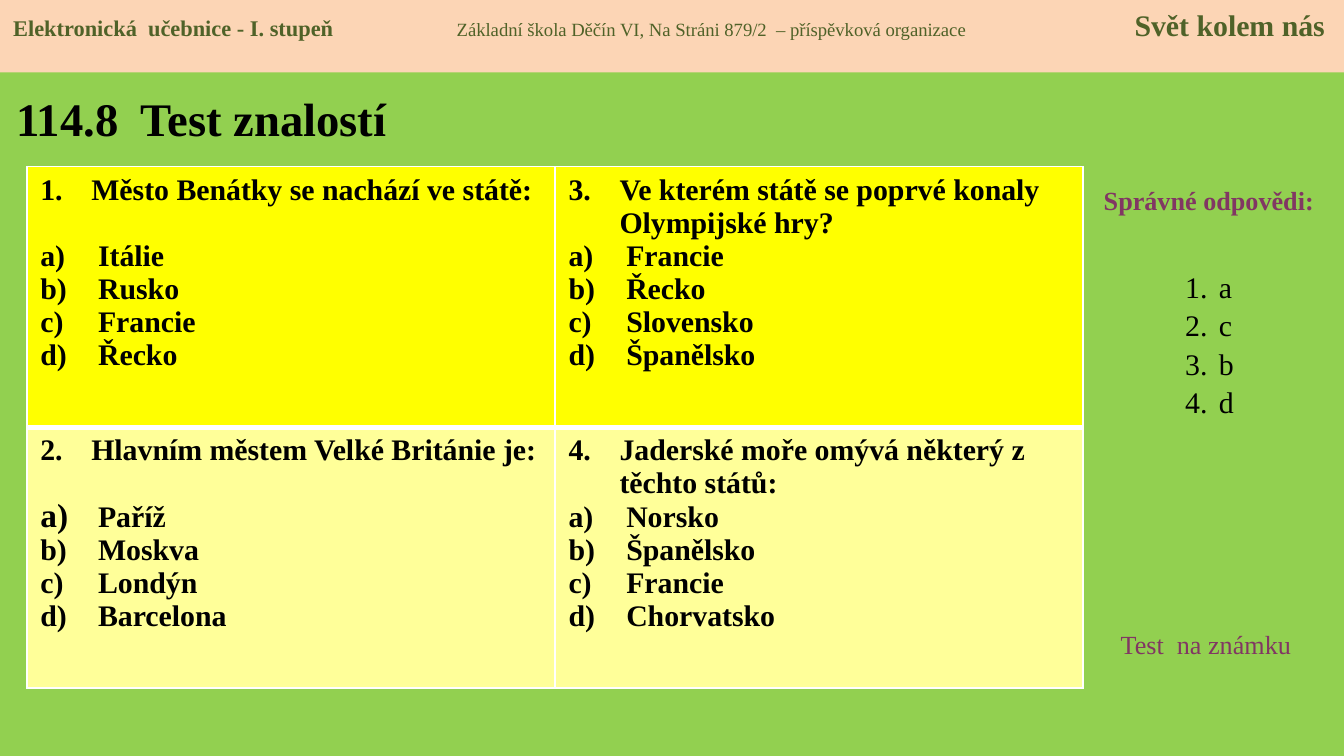
"""Builds a quiz slide with four questions, a header band and an answer key."""
from typing import NamedTuple

from lxml.etree import SubElement as Sub
from pptx import Presentation
from pptx.dml.color import RGBColor as RGB
from pptx.enum.shapes import MSO_SHAPE as Shape
from pptx.enum.text import MSO_ANCHOR as Anchor, MSO_AUTO_SIZE as Auto, PP_ALIGN as Align
from pptx.oxml.ns import qn
from pptx.util import Inches, Pt

FONT = "Times New Roman"
GREEN = RGB(0x92, 0xD0, 0x50)
PEACH = RGB(0xFC, 0xD5, 0xB5)
OLIVE = RGB(0x4F, 0x62, 0x28)
PLUM = RGB(0x81, 0x37, 0x63)
YELLOW = RGB(0xFF, 0xFF, 0x00)
PALE = RGB(0xFF, 0xFF, 0x99)
BLACK = RGB(0, 0, 0)
WHITE = RGB(0xFF, 0xFF, 0xFF)

UNIT = Inches(0.1)
COLS, ROWS = 100, 56.25


class Box(NamedTuple):
    """Left, top, width and height in grid units."""
    left: float
    top: float
    width: float
    height: float

    def emu(self) -> list[int]:
        return [round(v * UNIT) for v in self]


class Style(NamedTuple):
    size: float
    color: RGB = BLACK
    bold: bool = False


class Question(NamedTuple):
    number: int
    text: str
    options: tuple[str, ...]
    gap: float = 0
    first_mark: int = 100


class Label(NamedTuple):
    text: str
    box: Box
    style: Style
    align: Align = Align.LEFT


QUIZ = Style(16, bold=True)
QUESTIONS = (
    (Question(1, "Město Benátky se nachází ve státě:",
              ("Itálie", "Rusko", "Francie", "Řecko"), gap=17.8),
     Question(3, "Ve kterém státě se poprvé konaly Olympijské hry?",
              ("Francie", "Řecko", "Slovensko", "Španělsko"))),
    (Question(2, "Hlavním městem Velké Británie je:",
              ("Paříž", "Moskva", "Londýn", "Barcelona"), gap=17.8, first_mark=112),
     Question(4, "Jaderské moře omývá některý z těchto států:",
              ("Norsko", "Španělsko", "Francie", "Chorvatsko"))),
)
HEADER = (
    ("Elektronická  učebnice - I. stupeň", Style(12, OLIVE, True)),
    ("\tZákladní škola Děčín VI, Na Stráni 879/2  – příspěvková organizace", Style(10, OLIVE)),
    ("\tSvět kolem nás", Style(16, OLIVE, True)),
)
HEADER_TABS = ((33, "l"), (97.6, "r"))
LABELS = (
    Label("Správné odpovědi:", Box(80.5, 13.2, 18.9, 3.4), Style(14, PLUM, True), Align.CENTER),
    Label("Test  na známku", Box(82.4, 46.3, 15.7, 3.4), Style(14, PLUM)),
)
ANSWERS = ("a", "c", "b", "d")


def style_run(r, style: Style) -> None:
    r.font.name = FONT
    r.font.size = Pt(style.size)
    r.font.bold = style.bold
    r.font.color.rgb = style.color


def write(p, text: str, style: Style) -> None:
    p.text = text
    for r in p.runs:
        style_run(r, style)


def add_line(tf, index: int):
    return tf.add_paragraph() if index else tf.paragraphs[0]


def number(p, kind: str, indent: float, start: int = 1, percent: int = 100) -> None:
    """Give a paragraph an automatic number with a hanging indent in grid units."""
    ppr = p._p.get_or_add_pPr()
    ppr.set("marL", str(round(indent * UNIT)))
    ppr.set("indent", str(round(-indent * UNIT)))
    if percent != 100:
        Sub(ppr, qn("a:buSzPct"), val=str(percent * 1000))
    Sub(ppr, qn("a:buFont"), typeface=FONT)
    bullet = Sub(ppr, qn("a:buAutoNum"), type=kind)
    if start > 1:
        bullet.set("startAt", str(start))


def add_text_box(s, box: Box):
    tf = s.shapes.add_textbox(*box.emu()).text_frame
    tf.word_wrap = True
    return tf


def add_label(s, label: Label) -> None:
    p = add_text_box(s, label.box).paragraphs[0]
    write(p, label.text, label.style)
    p.alignment = label.align


def border(cell, widths: dict[str, float]) -> None:
    tcpr = cell._tc.get_or_add_tcPr()
    for side, width in widths.items():
        ln = Sub(tcpr, qn(f"a:ln{side}"), w=str(Pt(width)))
        Sub(Sub(ln, qn("a:solidFill")), qn("a:srgbClr"), val=str(WHITE))


def fill_cell(cell, question: Question) -> None:
    tf = cell.text_frame
    write(tf.paragraphs[0], question.text, QUIZ)
    number(tf.paragraphs[0], "arabicPeriod", 3.8, question.number)
    for i, option in enumerate(question.options):
        p = tf.add_paragraph()
        write(p, option, QUIZ)
        number(p, "alphaLcParenR", 4.3, percent=100 if i else question.first_mark)
        if i == 0 and question.gap:
            p.space_before = Pt(question.gap)


def add_quiz(s, box: Box) -> None:
    table = s.shapes.add_table(2, 2, *box.emu()).table
    for i, (row, color) in enumerate(zip(QUESTIONS, (YELLOW, PALE))):
        for j, question in enumerate(row):
            cell = table.cell(i, j)
            border(cell, {"L": 1, "R": 1, "T": 3 if i else 1, "B": 1 if i else 3})
            cell.fill.solid()
            cell.fill.fore_color.rgb = color
            fill_cell(cell, question)


def add_answers(s, box: Box) -> None:
    tf = add_text_box(s, box)
    tf.margin_top = round(3.3 * UNIT)
    for i, answer in enumerate(ANSWERS):
        p = add_line(tf, i)
        write(p, answer, Style(16))
        number(p, "arabicPeriod", 2.5)
        p.line_spacing = 1.07


def add_header(s, box: Box) -> None:
    sp = s.shapes.add_shape(Shape.RECTANGLE, *box.emu())
    sp.shadow.inherit = False
    sp.fill.solid()
    sp.fill.fore_color.rgb = PEACH
    sp.line.fill.background()
    tf = sp.text_frame
    tf.word_wrap = True
    tf.vertical_anchor = Anchor.TOP
    p = tf.paragraphs[0]
    p.alignment = Align.LEFT
    tabs = Sub(p._p.get_or_add_pPr(), qn("a:tabLst"))
    for pos, align in HEADER_TABS:
        Sub(tabs, qn("a:tab"), pos=str(round(pos * UNIT)), algn=align)
    for text, style in HEADER:
        r = p.add_run()
        r.text = text
        style_run(r, style)


def add_title(s, text: str, box: Box) -> None:
    sp = s.shapes.title
    sp.left, sp.top, sp.width, sp.height = box.emu()
    tf = sp.text_frame
    tf.auto_size = Auto.NONE
    tf.vertical_anchor = Anchor.MIDDLE
    write(tf.paragraphs[0], text, Style(25, bold=True))
    tf.paragraphs[0].alignment = Align.LEFT


def main() -> None:
    prs = Presentation()
    prs.slide_width, prs.slide_height = round(COLS * UNIT), round(ROWS * UNIT)
    s = prs.slides.add_slide(prs.slide_layouts[5])
    s.background.fill.solid()
    s.background.fill.fore_color.rgb = GREEN
    add_title(s, "114.8  Test znalostí", Box(0.2, 5.5, 31.9, 6.5))
    add_quiz(s, Box(2, 12.4, 78.6, 38.8))
    for label in LABELS:
        add_label(s, label)
    add_answers(s, Box(87.2, 16.5, 5.5, 19.9))
    add_header(s, Box(0, 0, COLS, 5.4))
    prs.save("out.pptx")


if __name__ == "__main__":
    main()
